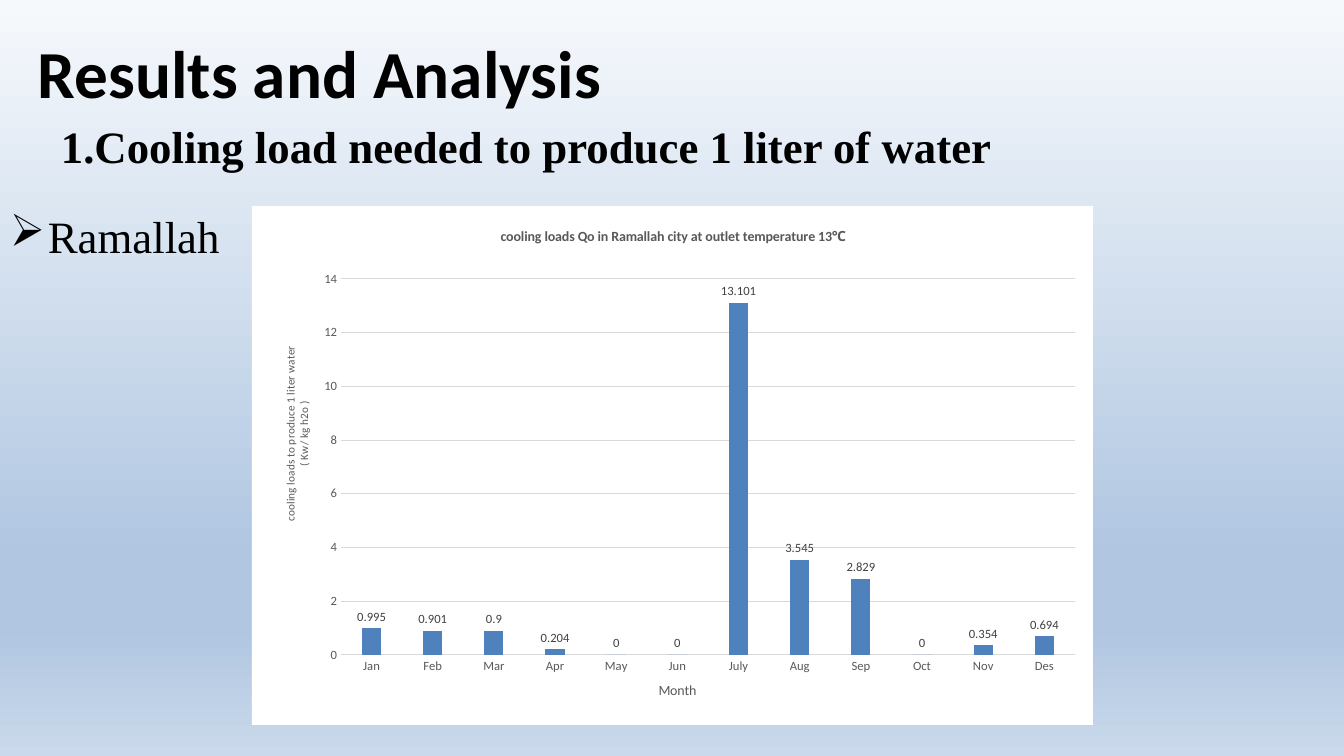
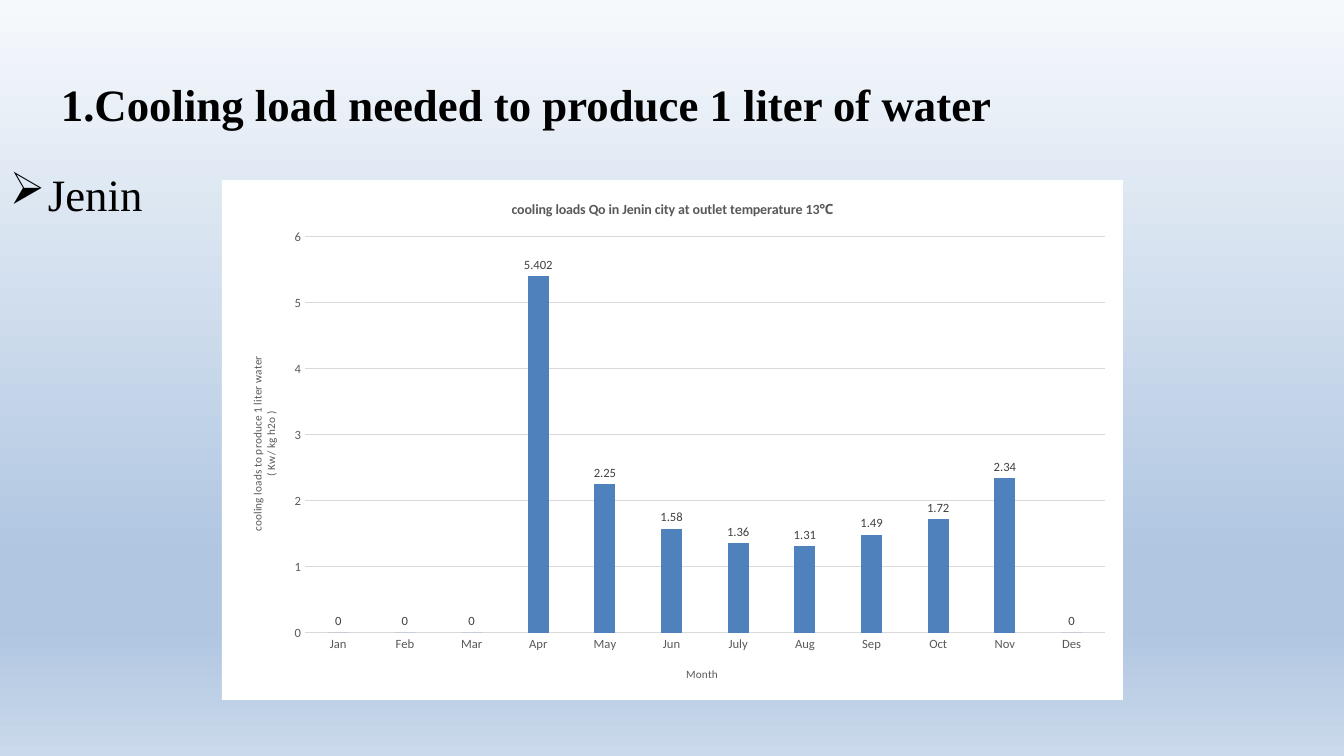
"""Two slides of monthly cooling loads per liter of water, one city on each."""
from lxml.etree import SubElement
from pptx import Presentation
from pptx.chart.data import CategoryChartData
from pptx.dml.color import RGBColor
from pptx.enum.chart import XL_CHART_TYPE as ChartType, XL_LABEL_POSITION as LabelPos, XL_TICK_MARK as Tick
from pptx.enum.text import MSO_ANCHOR as Anchor
from pptx.oxml import parse_xml
from pptx.oxml.ns import nsdecls, qn
from pptx.util import Pt

PX = 12192000 / 1344
COLORS = {"text": "000000", "muted": "595959", "label": "404040", "grid": "D9D9D9",
          "bar": "4F81BD", "panel": "FFFFFF"}
SKY = [(0, "F6F9FC"), (74, "B0C6E1"), (83, "B0C6E1"), (100, "CAD9EB")]
MONTHS = ["Jan", "Feb", "Mar", "Apr", "May", "Jun", "July", "Aug", "Sep", "Oct", "Nov", "Des"]
CITIES = [
    {"city": "Ramallah", "heading": "Results and Analysis", "body_top": 120,
     "loads": [0.995, 0.901, 0.9, 0.204, 0, 0, 13.101, 3.545, 2.829, 0, 0.354, 0.694],
     "panel": (252, 206, 841, 519), "plot": (341, 279, 734, 376), "top": 14, "step": 2,
     "month_size": 10, "titles": [(498, 225), (656, 679), (279, 343)]},
    {"city": "Jenin", "heading": None, "body_top": 78,
     "loads": [0, 0, 0, 5.402, 2.25, 1.58, 1.36, 1.31, 1.49, 1.72, 2.34, 0],
     "panel": (222, 180, 901, 520), "plot": (305, 237, 800, 396), "top": 6, "step": 1,
     "month_size": 8, "titles": [(509, 198), (684, 665), (246, 353)]},
]


def write(frame, text, size, color="muted", font="Calibri", bold=False, spacing=None, before=None,
          bullet=None, margin=0, hang=0):
    """Add one formatted paragraph to a text frame."""
    last = frame.paragraphs[-1]
    paragraph = frame.add_paragraph() if last.runs else last
    run = paragraph.add_run()
    run.text = text
    run.font.size, run.font.bold, run.font.name = Pt(size), bold, font
    run.font.color.rgb = RGBColor.from_string(COLORS[color])
    if spacing:
        paragraph.line_spacing = spacing
    if before:
        paragraph.space_before = Pt(before)
    if bullet:
        props = paragraph._p.get_or_add_pPr()
        props.set("marL", str(round(margin * PX)))
        props.set("indent", str(round(-hang * PX)))
        tag, attribute, value = bullet
        SubElement(props, qn(tag)).set(attribute, value)


def place(part, panel, x, y, w=None, h=None):
    """Fix a chart part at a slide position, as fractions of its panel."""
    layout = part.find(qn("c:layout"))
    if layout is None:
        layout = parse_xml(f"<c:layout {nsdecls('c')}/>")
        part.insert(0, layout)
    manual = SubElement(layout, qn("c:manualLayout"))
    settings = [("xMode", "edge"), ("yMode", "edge"),
                ("x", (x - panel[0]) / panel[2]), ("y", (y - panel[1]) / panel[3])]
    if w:
        settings = [("layoutTarget", "inner")] + settings + [("w", w / panel[2]), ("h", h / panel[3])]
    for key, value in settings:
        SubElement(manual, qn(f"c:{key}")).set("val", str(value))


deck = Presentation()
deck.slide_width, deck.slide_height = round(1344 * PX), round(756 * PX)

deck.slide_master.background.fill.gradient()
gradient = deck.slide_master.element.find(".//" + qn("a:gradFill"))
stops = "".join(f'<a:gs pos="{at * 1000}"><a:srgbClr val="{color}"/></a:gs>' for at, color in SKY)
gradient.getparent().replace(gradient, parse_xml(
    f'<a:gradFill {nsdecls("a")} rotWithShape="1"><a:gsLst>{stops}</a:gsLst>'
    '<a:lin ang="5400000" scaled="0"/></a:gradFill>'))

for result in CITIES:
    slide = deck.slides.add_slide(deck.slide_layouts[6])
    if result["heading"]:
        heading = slide.shapes.add_textbox(*(round(n * PX) for n in (28, 4, 1159, 146))).text_frame
        heading.word_wrap, heading.vertical_anchor = True, Anchor.MIDDLE
        write(heading, result["heading"], 48, color="text", bold=True, spacing=0.9)

    body = slide.shapes.add_textbox(*(round(n * PX) for n in (0, result["body_top"], 1210, 499))).text_frame
    body.word_wrap = True
    write(body, "Cooling load needed to produce 1 liter of water", 32, color="text", font="Times New Roman",
          bold=True, spacing=0.9, bullet=("a:buAutoNum", "type", "arabicPeriod"), margin=82, hang=31)
    write(body, result["city"], 32, color="text", font="Times New Roman", spacing=1.5, before=6.4,
          bullet=("a:buChar", "char", "➢"), margin=38, hang=38)

    data = CategoryChartData()
    data.categories = MONTHS
    data.add_series("Series 1", result["loads"])
    panel = result["panel"]
    chart = slide.shapes.add_chart(ChartType.COLUMN_CLUSTERED, *(round(n * PX) for n in panel), data).chart
    chart.has_legend = False
    chart.font.size, chart.font.name = Pt(10), "Calibri"
    chart.element.find(qn("c:txPr")).addprevious(parse_xml(
        f'<c:spPr {nsdecls("c", "a")}><a:solidFill><a:srgbClr val="{COLORS["panel"]}"/></a:solidFill>'
        '<a:ln><a:noFill/></a:ln></c:spPr>'))

    write(chart.chart_title.text_frame,
          f"cooling loads Qo in {result['city']} city at outlet temperature 13℃", 10, bold=True)
    months, loads = chart.category_axis, chart.value_axis
    write(months.axis_title.text_frame, "Month", result["month_size"])
    for line in ("cooling loads to produce 1 liter water", "( Kw/ kg h2o )"):
        write(loads.axis_title.text_frame, line, 8)

    for axis in (months, loads):
        axis.major_tick_mark = axis.minor_tick_mark = Tick.NONE
        axis.tick_labels.font.size, axis.tick_labels.font.name = Pt(9), "Calibri"
        axis.tick_labels.font.color.rgb = RGBColor.from_string(COLORS["muted"])
    loads.minimum_scale, loads.maximum_scale, loads.major_unit = 0, result["top"], result["step"]
    loads.format.line.fill.background()
    for rule in (months.format.line, loads.major_gridlines.format.line):
        rule.color.rgb, rule.width = RGBColor.from_string(COLORS["grid"]), Pt(0.75)

    columns = chart.plots[0]
    columns.gap_width, columns.overlap, columns.vary_by_categories = 219, -27, False
    fill = columns.series[0].format.fill
    fill.solid()
    fill.fore_color.rgb = RGBColor.from_string(COLORS["bar"])
    columns.has_data_labels = True
    values = columns.data_labels
    values.show_value, values.position = True, LabelPos.OUTSIDE_END
    values.font.size, values.font.name = Pt(9), "Calibri"
    values.font.color.rgb = RGBColor.from_string(COLORS["label"])

    place(chart.element.find(".//" + qn("c:plotArea")), panel, *result["plot"])
    for title, corner in zip(chart.element.iter(qn("c:title")), result["titles"]):
        place(title, panel, *corner)

deck.save("out.pptx")
